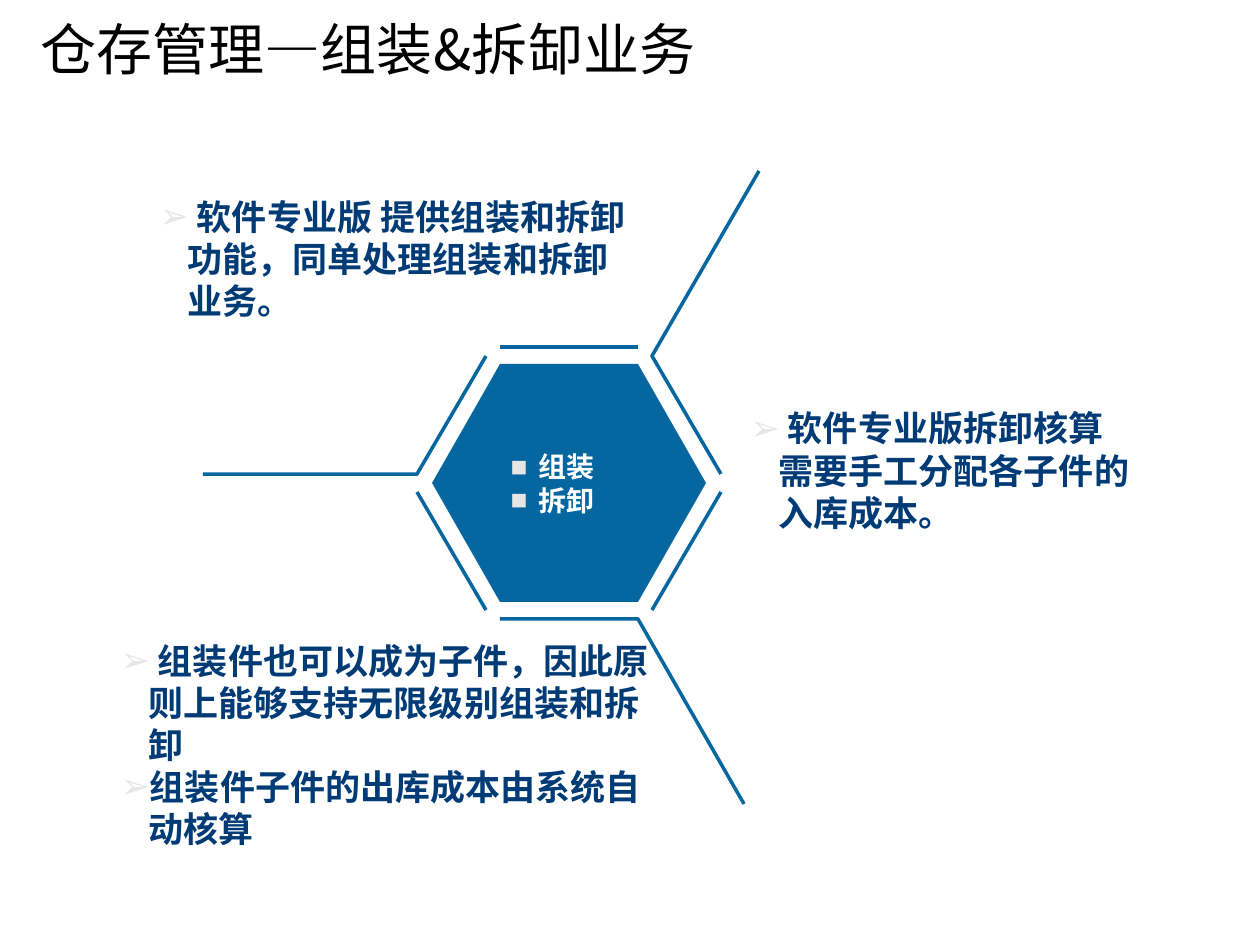
from dataclasses import dataclass
from math import cos, radians, sin

from lxml.etree import SubElement
from pptx import Presentation
from pptx.dml.color import RGBColor
from pptx.enum.text import MSO_ANCHOR, MSO_AUTO_SIZE, PP_ALIGN
from pptx.oxml.ns import qn
from pptx.util import Inches, Pt

PX = Inches(1) / 126


@dataclass(frozen=True)
class Theme:
    font: str = "Noto Sans CJK SC"
    black: str = "000000"
    white: str = "FFFFFF"
    navy: str = "003B76"
    blue: str = "06669F"
    bullet: str = "E6E6E6"
    title_size: int = 32
    note_size: int = 20
    label_size: int = 16
    line_width: int = 2
    leading: float = 1.2


THEME = Theme()

CENTER = (569, 483)
RADIUS = 137
GAP = 17
RAY = 214

TITLE = "仓存管理—组装&拆缷业务"
LABEL = ["组装", "拆卸"]
NOTES = [
    ((147, 186, 496, 139),
     [" 软件专业版 提供组装和拆卸功能，同单处理组装和拆卸业务。"]),
    ((108, 630, 558, 183),
     [" 组装件也可以成为子件，因此原则上能够支持无限级别组装和拆卸",
      "组装件子件的出库成本由系统自动核算"]),
    ((738, 398, 406, 139),
     [" 软件专业版拆卸核算需要手工分配各子件的入库成本。"]),
]


def px(n):
    return round(n * PX)


def place(sp, box):
    sp.left, sp.top, sp.width, sp.height = map(px, box)


def format_runs(p, size, color, bold):
    for r in p.runs:
        r.font.size = Pt(size)
        r.font.bold = bold
        r.font.name = THEME.font
        r.font.color.rgb = RGBColor.from_string(color)
        SubElement(r.font._element, qn("a:ea"), typeface=THEME.font)


def add_bullet(p, char):
    pPr = p._p.get_or_add_pPr()
    pPr.set("marL", str(px(28)))
    pPr.set("indent", str(-px(28)))
    color = SubElement(pPr, qn("a:buClr"))
    SubElement(color, qn("a:srgbClr"), val=THEME.bullet)
    SubElement(pPr, qn("a:buChar"), char=char)


def fill_title(sp):
    place(sp, (28, 0, 997, 96))
    tf = sp.text_frame
    tf.text = TITLE
    tf.vertical_anchor = MSO_ANCHOR.MIDDLE
    p = tf.paragraphs[0]
    p.alignment = PP_ALIGN.LEFT
    format_runs(p, THEME.title_size, THEME.black, False)


def fill_list(sp, box, items, char, size, color, wrap=True):
    place(sp, box)
    tf = sp.text_frame
    tf.text = "\n".join(items)
    tf.word_wrap = wrap
    tf.auto_size = MSO_AUTO_SIZE.SHAPE_TO_FIT_TEXT
    tf.vertical_anchor = MSO_ANCHOR.TOP
    tf.margin_top = px(9)
    for p in tf.paragraphs:
        add_bullet(p, char)
        p.alignment = PP_ALIGN.LEFT
        p.space_before = p.space_after = Pt(0)
        p.line_spacing = Pt(size * THEME.leading)
        format_runs(p, size, color, True)


def polar(origin, length, angle):
    x, y = origin
    a = radians(angle)
    return x + length * cos(a), y + length * sin(a)


def add_path(s, points, closed=False):
    """Draw a filled outline when closed, otherwise an open line."""
    start, *rest = [(round(x), round(y)) for x, y in points]
    builder = s.shapes.build_freeform(*start, scale=PX)
    builder.add_line_segments(rest, close=closed)
    sp = builder.convert_to_shape()
    sp.shadow.inherit = False
    blue = RGBColor.from_string(THEME.blue)
    if closed:
        sp.fill.solid()
        sp.fill.fore_color.rgb = blue
        sp.line.fill.background()
    else:
        sp.fill.background()
        sp.line.color.rgb = blue
        sp.line.width = Pt(THEME.line_width)


def add_hexagon(s):
    """Draw the hexagon, its six offset sides and a ray from every other side."""
    angles = range(0, 360, 60)
    corners = [polar(CENTER, RADIUS, a) for a in angles]
    add_path(s, corners, closed=True)
    for i, angle in enumerate(angles):
        ends = corners[i], corners[(i + 1) % 6]
        side = [polar(c, GAP, angle + 30) for c in ends]
        if i % 2:
            side.insert(0, polar(side[0], RAY, angle))
        add_path(s, side)


def main():
    prs = Presentation()
    prs.slide_width, prs.slide_height = Inches(10), Inches(7.5)
    s = prs.slides.add_slide(prs.slide_layouts.get_by_name("Comparison"))
    title, label, *notes = s.placeholders

    fill_title(title)
    add_hexagon(s)
    fill_list(label, (498, 441, 121, 97), LABEL, "■",
              THEME.label_size, THEME.white, wrap=False)
    s.shapes._spTree.append(label._element)  # in front of the hexagon
    for sp, (box, items) in zip(notes, NOTES):
        fill_list(sp, box, items, "➢", THEME.note_size, THEME.navy)

    prs.save("out.pptx")


if __name__ == "__main__":
    main()
